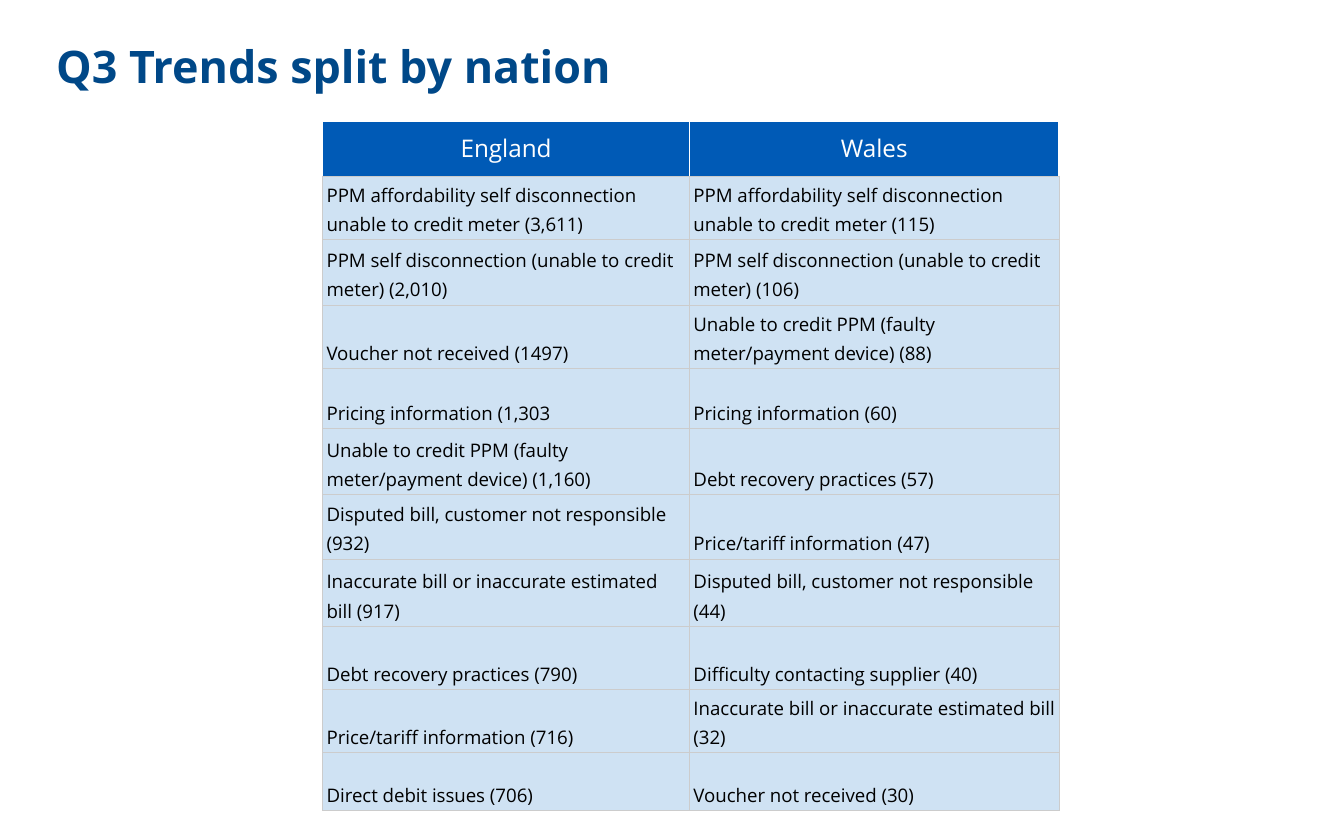
from lxml import etree
from pptx import Presentation
from pptx.dml.color import RGBColor
from pptx.enum.text import MSO_ANCHOR, PP_ALIGN
from pptx.oxml.ns import qn
from pptx.util import Inches, Pt

TOP, MIDDLE, BOTTOM = MSO_ANCHOR.TOP, MSO_ANCHOR.MIDDLE, MSO_ANCHOR.BOTTOM
LEFT, CENTER = PP_ALIGN.LEFT, PP_ALIGN.CENTER

FONT = "Open Sans"
COLORS = {
    "title": "004888",
    "header": "005AB6",
    "body": "CFE2F3",
    "grid": "CCCCCC",
    "white": "FFFFFF",
    "black": "000000",
}

HEADINGS = ("England", "Wales")
TRENDS = [
    ("PPM affordability self disconnection unable to credit meter (3,611)",
     "PPM affordability self disconnection unable to credit meter (115)"),
    ("PPM self disconnection (unable to credit meter) (2,010)",
     "PPM self disconnection (unable to credit meter) (106)"),
    ("Voucher not received (1497)",
     "Unable to credit PPM (faulty meter/payment device) (88)"),
    ("Pricing information (1,303", "Pricing information (60)"),
    ("Unable to credit PPM (faulty meter/payment device) (1,160)",
     "Debt recovery practices (57)"),
    ("Disputed bill, customer not responsible (932)",
     "Price/tariff information (47)"),
    ("Inaccurate bill or inaccurate estimated bill (917)",
     "Disputed bill, customer not responsible (44)"),
    ("Debt recovery practices (790)", "Difficulty contacting supplier (40)"),
    ("Price/tariff information (716)",
     "Inaccurate bill or inaccurate estimated bill (32)"),
    ("Direct debit issues (706)", "Voucher not received (30)"),
]
COL_WIDTHS = (2.73, 2.75)
ROW_HEIGHTS = (0.41, 0.47, 0.49, 0.47, 0.45, 0.49, 0.48, 0.5, 0.47, 0.47, 0.43)


def rgb(name):
    return RGBColor.from_string(COLORS[name])


def set_text(tf, text, size, color, bold=False, align=LEFT, spacing=None):
    tf.text = text
    p = tf.paragraphs[0]
    p.alignment = align
    if spacing:
        p.line_spacing = spacing
    font = p.runs[0].font
    font.name, font.size, font.bold = FONT, Pt(size), bold
    font.color.rgb = rgb(color)


def set_borders(cell, sides):
    """Draw (color name, points) borders in the order left, right, top, bottom."""
    tc_pr = cell._tc.get_or_add_tcPr()
    for i, (tag, (color, width)) in enumerate(zip(("lnL", "lnR", "lnT", "lnB"), sides)):
        ln = etree.Element(qn(f"a:{tag}"), w=str(Pt(width)))
        fill = etree.SubElement(ln, qn("a:solidFill"))
        etree.SubElement(fill, qn("a:srgbClr"), val=COLORS[color])
        tc_pr.insert(i, ln)


def style_cell(cell, fill, anchor, margin_x, margin_y, sides):
    cell.fill.solid()
    cell.fill.fore_color.rgb = rgb(fill)
    cell.vertical_anchor = anchor
    cell.margin_left = cell.margin_right = Inches(margin_x)
    cell.margin_top = cell.margin_bottom = Inches(margin_y)
    set_borders(cell, sides)


def add_title(s, text):
    sp = s.shapes.add_textbox(Inches(0.32), Inches(0.19), Inches(9), Inches(1.04))
    tf = sp.text_frame
    tf.word_wrap = True
    tf.vertical_anchor = TOP
    tf.margin_left = tf.margin_right = Inches(0.1)
    tf.margin_top = tf.margin_bottom = Inches(0.1)
    set_text(tf, text, 24, "title", bold=True)


def add_trends_table(s):
    table = s.shapes.add_table(
        len(ROW_HEIGHTS), len(COL_WIDTHS), Inches(2.4), Inches(0.9),
        Inches(sum(COL_WIDTHS)), Inches(sum(ROW_HEIGHTS))).table
    table.horz_banding = False
    for column, width in zip(table.columns, COL_WIDTHS):
        column.width = Inches(width)
    for row, height in zip(table.rows, ROW_HEIGHTS):
        row.height = Inches(height)

    grid = ("grid", 0.5)
    # Header row
    for col, heading in enumerate(HEADINGS):
        cell = table.cell(0, col)
        set_text(cell.text_frame, heading, 13, "white", align=CENTER)
        style_cell(cell, "header", MIDDLE, 0.1, 0.05, [("white", 1)] * 3 + [grid])
    # Ranked trends
    for row, trends in enumerate(TRENDS, start=1):
        for col, trend in enumerate(trends):
            cell = table.cell(row, col)
            set_text(cell.text_frame, trend, 10, "black", spacing=1.15)
            style_cell(cell, "body", BOTTOM, 0.03, 0.02, [grid] * 4)


def main():
    prs = Presentation()
    prs.slide_width, prs.slide_height = Inches(10), Inches(6.25)
    s = prs.slides.add_slide(prs.slide_layouts[6])
    add_title(s, "Q3 Trends split by nation")
    add_trends_table(s)
    prs.save("out.pptx")


if __name__ == "__main__":
    main()
